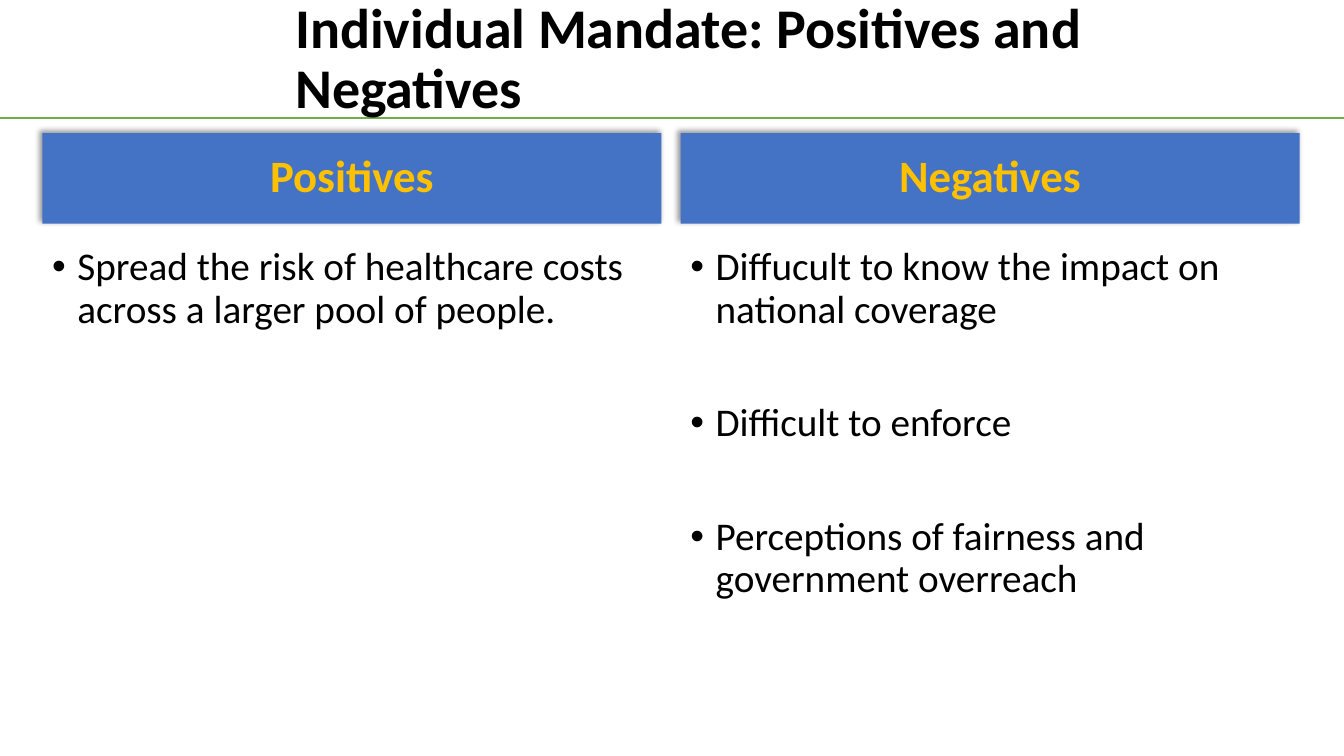
from lxml import etree
from pptx import Presentation
from pptx.dml.color import RGBColor
from pptx.enum.shapes import MSO_CONNECTOR, MSO_SHAPE
from pptx.enum.text import MSO_ANCHOR, PP_ALIGN
from pptx.oxml.ns import qn
from pptx.util import Emu, Pt

EMU_PER_PX = 9144  # 100 px to the inch


def px(n):
    return Emu(n * EMU_PER_PX)


def rgb(value):
    return RGBColor.from_string(value)


class SlideBuilder:
    FONT = "Calibri"
    BLACK, BLUE, GOLD, GREEN = "000000", "4472C4", "FFC000", "70AD47"

    def __init__(self, slide):
        self.s = slide

    def style(self, p, size, color, bold=False):
        p.line_spacing = 0.9
        for r in p.runs:
            r.font.name = self.FONT
            r.font.size = Pt(size)
            r.font.bold = bold
            r.font.color.rgb = rgb(color)

    def rule(self, x1, y1, x2, y2):
        line = self.s.shapes.add_connector(
            MSO_CONNECTOR.STRAIGHT, px(x1), px(y1), px(x2), px(y2))
        line.line.color.rgb = rgb(self.GREEN)
        line.line.width = Pt(1.25)
        etree.SubElement(line._element.spPr, qn("a:effectLst"))

    def textbox(self, x, y, w, h):
        sp = self.s.shapes.add_textbox(px(x), px(y), px(w), px(h))
        sp.text_frame.word_wrap = True
        return sp.text_frame

    def title(self, text, x, y, w, h):
        tf = self.textbox(x, y, w, h)
        tf.vertical_anchor = MSO_ANCHOR.MIDDLE
        tf.text = text
        self.style(tf.paragraphs[0], 40, self.BLACK, bold=True)

    def shadow(self, sp):
        sp.shadow.inherit = False
        effects = sp._element.spPr.find(qn("a:effectLst"))
        outer = etree.SubElement(
            effects, qn("a:outerShdw"), blurRad=str(Pt(4)), dist=str(Pt(3)),
            dir=str(225 * 60000), algn="br", rotWithShape="0")
        color = etree.SubElement(outer, qn("a:srgbClr"), val=self.BLACK)
        etree.SubElement(color, qn("a:alpha"), val="40000")

    def header(self, text, x, y, w, h):
        sp = self.s.shapes.add_shape(
            MSO_SHAPE.RECTANGLE, px(x), px(y), px(w), px(h))
        sp.fill.solid()
        sp.fill.fore_color.rgb = rgb(self.BLUE)
        sp.line.fill.background()
        self.shadow(sp)
        tf = sp.text_frame
        tf.word_wrap = True
        tf.vertical_anchor = MSO_ANCHOR.MIDDLE
        tf.text = text
        p = tf.paragraphs[0]
        p.alignment = PP_ALIGN.CENTER
        self.style(p, 32, self.GOLD, bold=True)

    def bullets(self, items, x, y, w, h):
        tf = self.textbox(x, y, w, h)
        for i, item in enumerate(items):
            p = tf.paragraphs[0] if i == 0 else tf.add_paragraph()
            p.text = item
            pPr = p._p.get_or_add_pPr()
            pPr.set("marL", str(px(25)))
            pPr.set("indent", str(px(-25)))
            etree.SubElement(pPr, qn("a:buFont"), typeface="Arial")
            etree.SubElement(pPr, qn("a:buChar"), char="•")
            if i:
                p.space_before = Pt(51)
            self.style(p, 28, self.BLACK)


def main():
    prs = Presentation()
    prs.slide_width, prs.slide_height = px(1333), px(750)
    s = SlideBuilder(prs.slides.add_slide(prs.slide_layouts[6]))

    # Rule under the title
    s.rule(0, 117, 1333, 117)

    # Two columns: header bar and bullet list
    columns = [
        ("Positives",
         ["Spread the risk of healthcare costs across a larger pool of people."]),
        ("Negatives",
         ["Diffucult to know the impact on national coverage",
          "Difficult to enforce",
          "Perceptions of fairness and government overreach"]),
    ]
    left, width, pitch = 42, 614, 633
    for i, (heading, items) in enumerate(columns):
        x = left + i * pitch
        s.header(heading, x, 132, width, 90)
        s.bullets(items, x, 240, width, 437)

    # Title
    s.title("Individual Mandate: Positives and Negatives", 283, 20, 1006, 80)

    prs.save("out.pptx")


if __name__ == "__main__":
    main()
